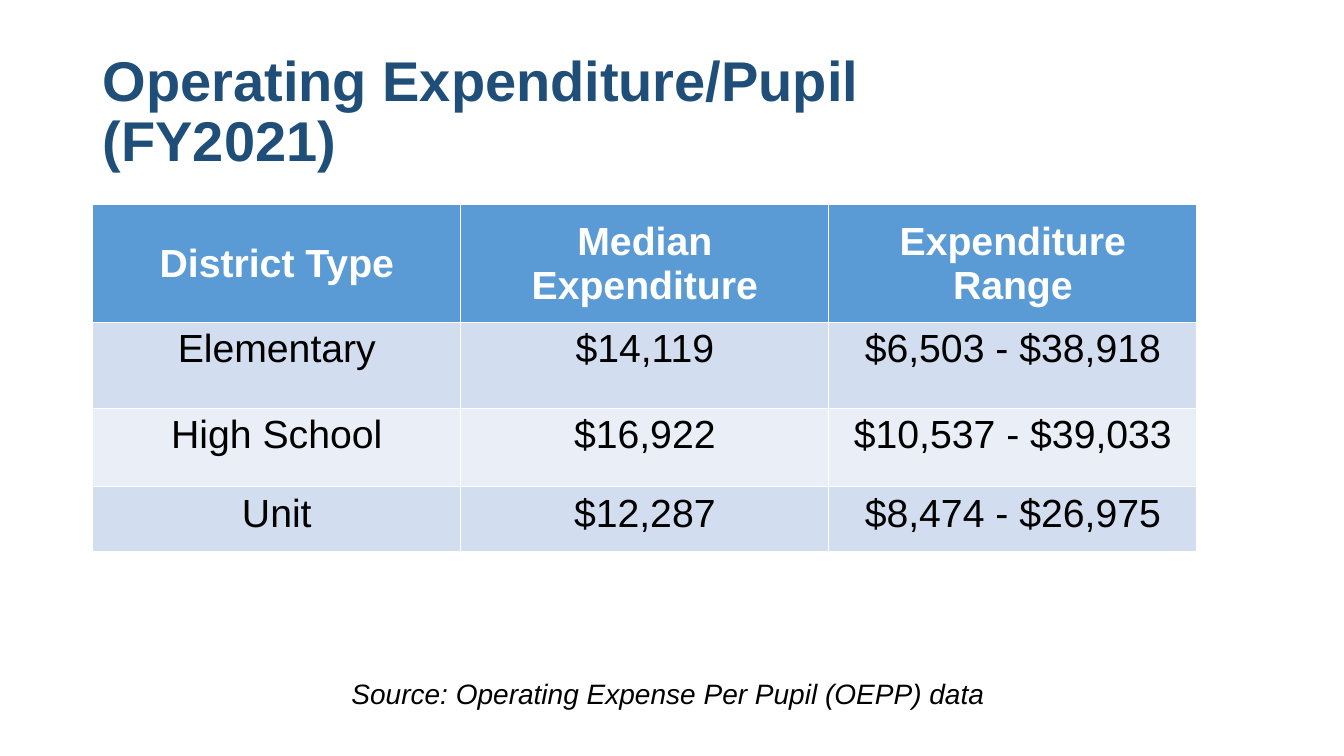
from dataclasses import dataclass

from lxml.etree import SubElement
from pptx import Presentation
from pptx.dml.color import RGBColor as RGB
from pptx.enum.text import MSO_ANCHOR as Anchor, MSO_AUTO_SIZE as Fit, PP_ALIGN as Align
from pptx.oxml.ns import qn

PX = 9144


@dataclass(frozen=True)
class Theme:
    """Colours, typeface and type sizes."""
    font: str = "Arial"
    navy: str = "1F4E79"
    ink: str = "000000"
    white: str = "FFFFFF"
    head: str = "5B9BD5"
    bands: tuple = ("D2DEEF", "EAEFF7")
    big: int = 40
    mid: int = 28
    small: int = 20


LOOK = Theme()
ROWS = [
    ("District Type", "Median Expenditure", "Expenditure Range"),
    ("Elementary", "$14,119", "$6,503 - $38,918"),
    ("High School", "$16,922", "$10,537 - $39,033"),
    ("Unit", "$12,287", "$8,474 - $26,975"),
]
HEIGHTS = (117, 85, 78, 64)


def emu(*box):
    """Turn px lengths into EMU."""
    return [n * PX for n in box]


def style(frame, size, color, align, bold=False, italic=False):
    """Format every run of a text frame."""
    for para in frame.paragraphs:
        para.alignment = align
        for run in para.runs:
            font = run.font
            font.name, font.size = LOOK.font, size * 12700
            font.bold, font.italic = bold, italic
            font.color.rgb = RGB.from_string(color)


def add_title(slide, box):
    """Place the two-line title in its placeholder."""
    title = slide.shapes.title
    title.left, title.top, title.width, title.height = emu(*box)
    frame = title.text_frame
    frame.text = "Operating Expenditure/Pupil \v(FY2021)"
    frame.word_wrap, frame.auto_size = True, Fit.NONE
    frame.vertical_anchor = Anchor.MIDDLE
    para = frame.paragraphs[0]
    para.line_spacing = 0.9
    for gap in para._p.findall(qn("a:br")):
        SubElement(gap, qn("a:rPr"), sz=str(LOOK.big * 100))
    style(frame, LOOK.big, LOOK.navy, Align.LEFT, bold=True)


def add_costs(slide, box):
    """Draw the table of spending by district type."""
    table = slide.shapes.add_table(len(ROWS), len(ROWS[0]), *emu(*box)).table
    for row, tall in zip(table.rows, HEIGHTS):
        row.height = tall * PX
    for r, row in enumerate(ROWS):
        top = r == 0
        for c, text in enumerate(row):
            cell = table.cell(r, c)
            cell.text_frame.text = text
            cell.vertical_anchor = Anchor.MIDDLE if top else Anchor.TOP
            cell.fill.solid()
            shade = LOOK.head if top else LOOK.bands[(r - 1) % 2]
            cell.fill.fore_color.rgb = RGB.from_string(shade)
            ink = LOOK.white if top else LOOK.ink
            style(cell.text_frame, LOOK.mid, ink, Align.CENTER, bold=top)


def add_source(slide, box):
    """Write the source line under the table."""
    frame = slide.shapes.add_textbox(*emu(*box)).text_frame
    frame.text = "Source: Operating Expense Per Pupil (OEPP) data "
    frame.word_wrap, frame.auto_size = True, Fit.SHAPE_TO_FIT_TEXT
    style(frame, LOOK.small, LOOK.ink, Align.CENTER, italic=True)


def main():
    """Build and save the slide."""
    deck = Presentation()
    deck.slide_width, deck.slide_height = emu(1333, 750)
    slide = deck.slides.add_slide(deck.slide_layouts[5])
    add_title(slide, (92, 40, 1150, 145))
    add_source(slide, (245, 666, 843, 44))
    add_costs(slide, (92, 203, 1095, sum(HEIGHTS)))
    deck.save("out.pptx")


if __name__ == "__main__":
    main()
